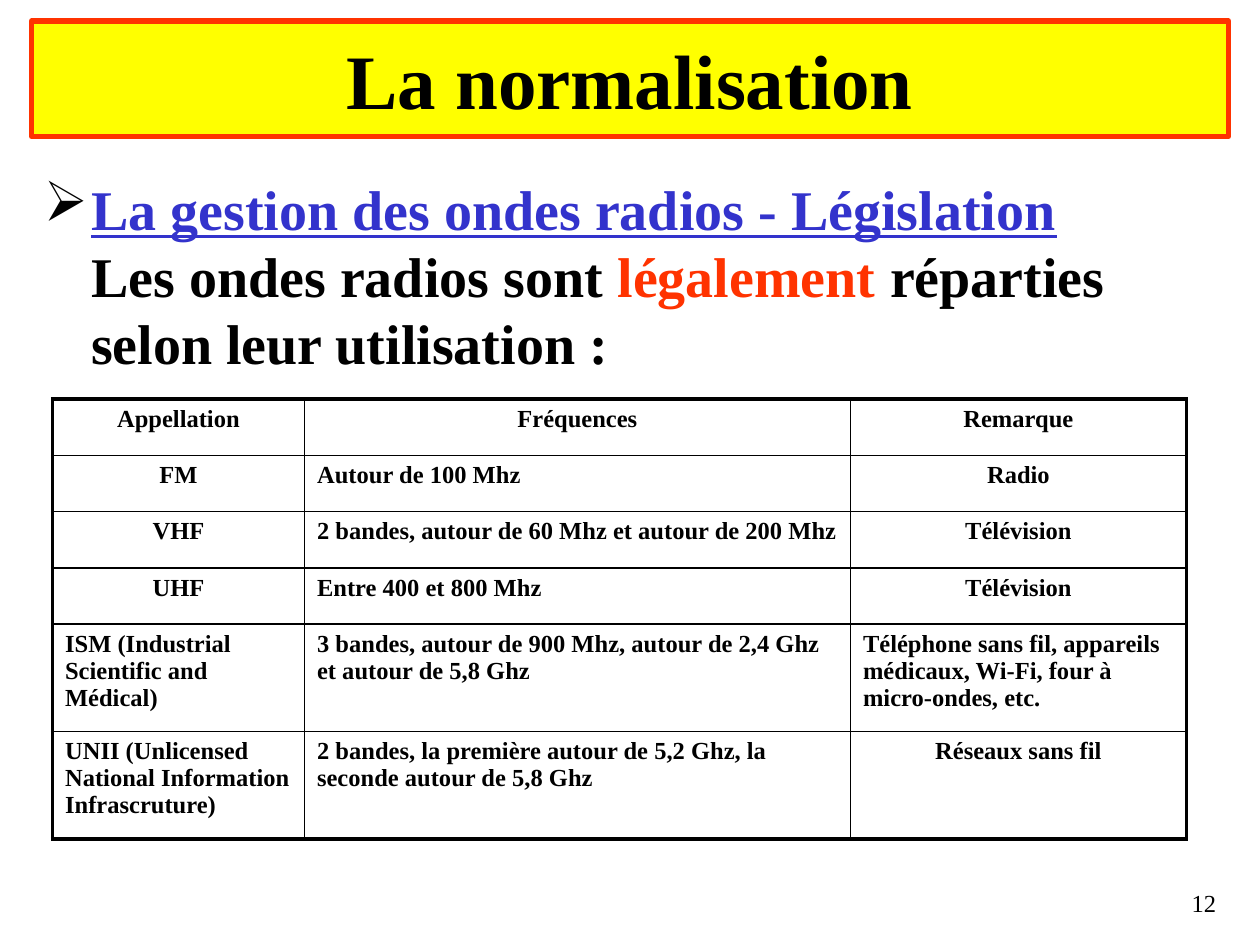
from pptx import Presentation
from pptx.dml.color import RGBColor as RGB
from pptx.enum.text import MSO_ANCHOR as Anchor, PP_ALIGN as Align
from pptx.oxml import parse_xml
from pptx.oxml.ns import nsdecls
from pptx.util import Pt

BLACK = RGB(0, 0, 0)
YELLOW = RGB(255, 255, 0)
RED = RGB(255, 51, 0)
BLUE = RGB(51, 51, 204)
FONT = "Times New Roman"

TITLE = "La normalisation"
HEAD = "La gestion des ondes radios - Législation"
BODY = [
    ("Les ondes radios sont ", BLACK),
    ("légalement", RED),
    (" réparties selon leur utilisation :", BLACK),
]
PAGE = "12"
ROWS = [
    ("Appellation", "Fréquences", "Remarque"),
    ("FM", "Autour de 100 Mhz", "Radio"),
    ("VHF", "2 bandes, autour de 60 Mhz et autour de 200 Mhz", "Télévision"),
    ("UHF", "Entre 400 et 800 Mhz", "Télévision"),
    ("ISM (Industrial Scientific and Médical)",
     "3 bandes, autour de 900 Mhz, autour de 2,4 Ghz et autour de 5,8 Ghz",
     "Téléphone sans fil, appareils médicaux, Wi-Fi, four à micro-ondes, etc."),
    ("UNII (Unlicensed National Information Infrascruture)",
     "2 bandes, la première autour de 5,2 Ghz, la seconde autour de 5,8 Ghz",
     "Réseaux sans fil"),
]
LEFT = {(1, 1), (2, 1), (3, 1), (4, 0), (4, 1), (4, 2), (5, 0), (5, 1)}
WIDTHS = [144, 312, 192]
HEIGHTS = [32.2] * 4 + [61.4] * 2


def add_run(para, text, size, color=BLACK, bold=True, under=False):
    run = para.add_run()
    run.text = text
    font = run.font
    font.name, font.size, font.bold = FONT, Pt(size), bold
    font.underline = under
    font.color.rgb = color


def add_box(slide, left, top, width, height):
    box = slide.shapes.add_textbox(Pt(left), Pt(top), Pt(width), Pt(height))
    box.text_frame.word_wrap = True
    return box.text_frame.paragraphs[0]


def add_edge(cell, side, width):
    cell._tc.get_or_add_tcPr().append(parse_xml(
        f'<a:{side} {nsdecls("a")} w="{Pt(width)}"><a:solidFill>'
        f'<a:srgbClr val="{BLACK}"/></a:solidFill></a:{side}>'))


def add_title(slide):
    title = slide.shapes.title
    title.left, title.top = Pt(18), Pt(12)
    title.width, title.height = Pt(684), Pt(66)
    title.fill.solid()
    title.fill.fore_color.rgb = YELLOW
    title.line.color.rgb = RED
    title.line.width = Pt(3)
    title.text_frame.vertical_anchor = Anchor.MIDDLE
    para = title.text_frame.paragraphs[0]
    para.alignment = Align.CENTER
    add_run(para, TITLE, 44)


def add_body(slide):
    para = add_box(slide, 18, 96, 684, 126)
    para.space_before = Pt(6.4)
    props = para._p.get_or_add_pPr()
    props.set("marL", str(Pt(27)))
    props.set("indent", str(Pt(-27)))
    for xml in (f'<a:buClr {nsdecls("a")}><a:srgbClr val="{BLACK}"/></a:buClr>',
                f'<a:buChar {nsdecls("a")} char="➢"/>'):
        props.append(parse_xml(xml))
    add_run(para, HEAD, 32, BLUE, under=True)
    para.add_line_break()
    for text, color in BODY:
        add_run(para, text, 32, color)


def add_grid(slide):
    rows, cols = len(ROWS), len(WIDTHS)
    table = slide.shapes.add_table(
        rows, cols, Pt(30), Pt(228), Pt(sum(WIDTHS)), Pt(sum(HEIGHTS))).table
    for col, width in zip(table.columns, WIDTHS):
        col.width = Pt(width)
    for row, height in zip(table.rows, HEIGHTS):
        row.height = Pt(height)
    for r, texts in enumerate(ROWS):
        for c, text in enumerate(texts):
            cell = table.cell(r, c)
            outer = {"lnL": c == 0, "lnR": c == cols - 1,
                     "lnT": r == 0, "lnB": r == rows - 1}
            for side, thick in outer.items():
                add_edge(cell, side, 2.25 if thick else 1)
            cell.fill.background()
            para = cell.text_frame.paragraphs[0]
            para.alignment = Align.LEFT if (r, c) in LEFT else Align.CENTER
            para.space_before = Pt(2.8)
            add_run(para, text, 14)


def main():
    deck = Presentation()
    deck.slide_width, deck.slide_height = Pt(720), Pt(540)
    slide = deck.slides.add_slide(deck.slide_layouts[5])
    add_title(slide)
    add_body(slide)
    add_grid(slide)
    para = add_box(slide, 552, 504, 150, 24)
    para.alignment = Align.RIGHT
    add_run(para, PAGE, 14, bold=False)
    deck.save("out.pptx")


if __name__ == "__main__":
    main()
